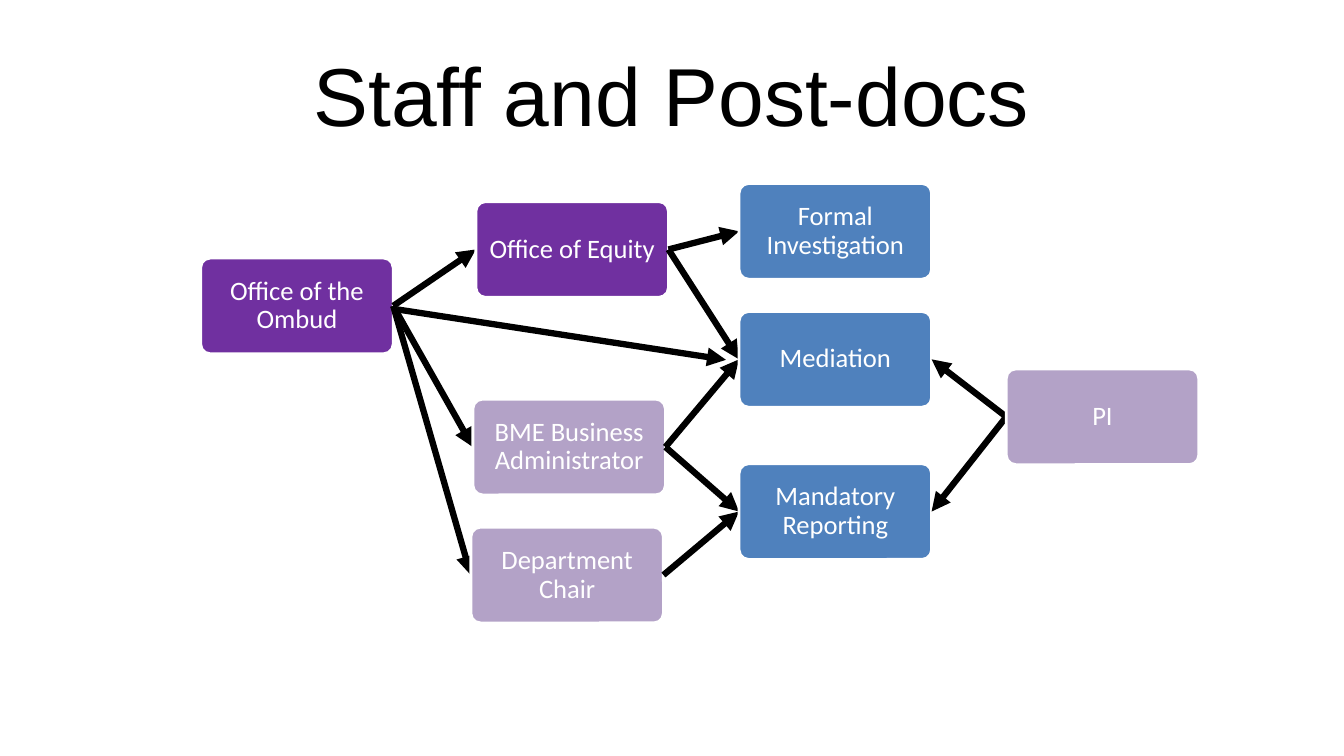
from lxml.etree import SubElement
from pptx import Presentation
from pptx.dml.color import RGBColor
from pptx.enum.shapes import MSO_CONNECTOR as Connector, MSO_SHAPE as Shape
from pptx.enum.text import MSO_ANCHOR as Anchor, MSO_AUTO_SIZE as AutoSize, PP_ALIGN as Align
from pptx.oxml.ns import qn
from pptx.util import Inches, Pt

COLORS = {"ombud": "7030A0", "outcome": "4F81BD", "staff": "B3A2C7",
          "white": "FFFFFF", "black": "000000"}
BOX_WIDTH, BOX_HEIGHT = 1.91, 0.95
LEFT_SITE, RIGHT_SITE = 1, 3

OFFICES = {
    "Office of the Ombud": (1.99, 2.56, "ombud"),
    "Office of Equity": (4.72, 2.0, "ombud"),
    "Formal Investigation": (7.33, 1.82, "outcome"),
    "BME Business Administrator": (4.69, 3.96, "staff"),
    "Department Chair": (4.67, 5.23, "staff"),
    "Mediation": (7.33, 3.09, "outcome"),
    "Mandatory Reporting": (7.33, 4.6, "outcome"),
    "PI": (9.98, 3.66, "staff"),
}
REFERRALS = [
    ("Office of the Ombud", "Office of Equity"),
    ("Office of Equity", "Formal Investigation"),
    ("Office of Equity", "Mediation"),
    ("Office of the Ombud", "BME Business Administrator"),
    ("BME Business Administrator", "Mediation"),
    ("BME Business Administrator", "Mandatory Reporting"),
    ("Office of the Ombud", "Department Chair"),
    ("Department Chair", "Mandatory Reporting"),
]
PI_REFERRALS = ["Mediation", "Mandatory Reporting"]


def assign(target, values):
    """Set every attribute named in values on target."""
    for name, value in values.items():
        setattr(target, name, value)


def rgb(color):
    """Return the named palette colour."""
    return RGBColor.from_string(COLORS[color])


class ReferralSlide:
    """Hold the style and the slide, and draw each kind of element."""

    def __init__(self, slide):
        """Keep the slide to draw on."""
        self.slide = slide
        self.shapes = slide.shapes

    def label(self, frame, text, font, size, color, margin, spacing):
        """Fill a text frame with one centred paragraph."""
        margins = dict.fromkeys(
            ("margin_left", "margin_right", "margin_top", "margin_bottom"), Inches(margin))
        assign(frame, {"text": text, "word_wrap": True, "auto_size": AutoSize.NONE,
                       "vertical_anchor": Anchor.MIDDLE, **margins})
        paragraph = frame.paragraphs[0]
        assign(paragraph, {"alignment": Align.CENTER, "line_spacing": spacing})
        assign(paragraph.runs[0].font, {"name": font, "size": Pt(size)})
        paragraph.runs[0].font.color.rgb = rgb(color)

    def title(self, text):
        """Place and format the title."""
        heading = self.shapes.title
        assign(heading, {"left": Inches(0.66), "top": Inches(0.3),
                         "width": Inches(12), "height": Inches(1.25)})
        self.label(heading.text_frame, text, "Arial", 58.7, "black", 0.1, 1.0)

    def office(self, text, left, top, color):
        """Draw a rounded box with its label."""
        office = self.shapes.add_shape(Shape.ROUNDED_RECTANGLE, Inches(left), Inches(top),
                                       Inches(BOX_WIDTH), Inches(BOX_HEIGHT))
        office.adjustments[0] = 0.1
        office.shadow.inherit = False
        office.fill.solid()
        office.fill.fore_color.rgb = rgb(color)
        office.line.color.rgb = rgb("white")
        office.line.width = Pt(2)
        self.label(office.text_frame, text, "Calibri", 19, "white", 0.01, 0.9)
        return office

    def arrow(self, start=(0, 0), end=(0, 0)):
        """Draw a black arrow between two points."""
        arrow = self.shapes.add_connector(Connector.STRAIGHT, *map(Inches, start + end))
        arrow.line.color.rgb = rgb("black")
        arrow.line.width = Pt(4.5)
        properties = arrow._element.spPr
        SubElement(properties.find(qn("a:ln")), qn("a:tailEnd"), type="triangle")
        SubElement(properties, qn("a:effectLst"))
        return arrow

    def refer(self, source, target, sites, front):
        """Join two boxes with an arrow and bring the front box above it."""
        referral = self.arrow()
        referral.begin_connect(source, sites[0])
        referral.end_connect(target, sites[1])
        front._element.getparent().append(front._element)


def main():
    """Build and save the slide."""
    deck = Presentation()
    assign(deck, {"slide_width": Inches(13.33), "slide_height": Inches(7.5)})
    page = ReferralSlide(deck.slides.add_slide(deck.slide_layouts[5]))
    page.title("Staff and Post-docs")
    offices = {name: page.office(name, *place) for name, place in OFFICES.items()}
    for source, target in REFERRALS:
        page.refer(offices[source], offices[target], (RIGHT_SITE, LEFT_SITE), offices[target])
    for target in PI_REFERRALS:
        page.refer(offices["PI"], offices[target], (LEFT_SITE, RIGHT_SITE), offices["PI"])
    page.arrow((3.94, 3.07), (7.2, 3.57))
    deck.save("out.pptx")


if __name__ == "__main__":
    main()
